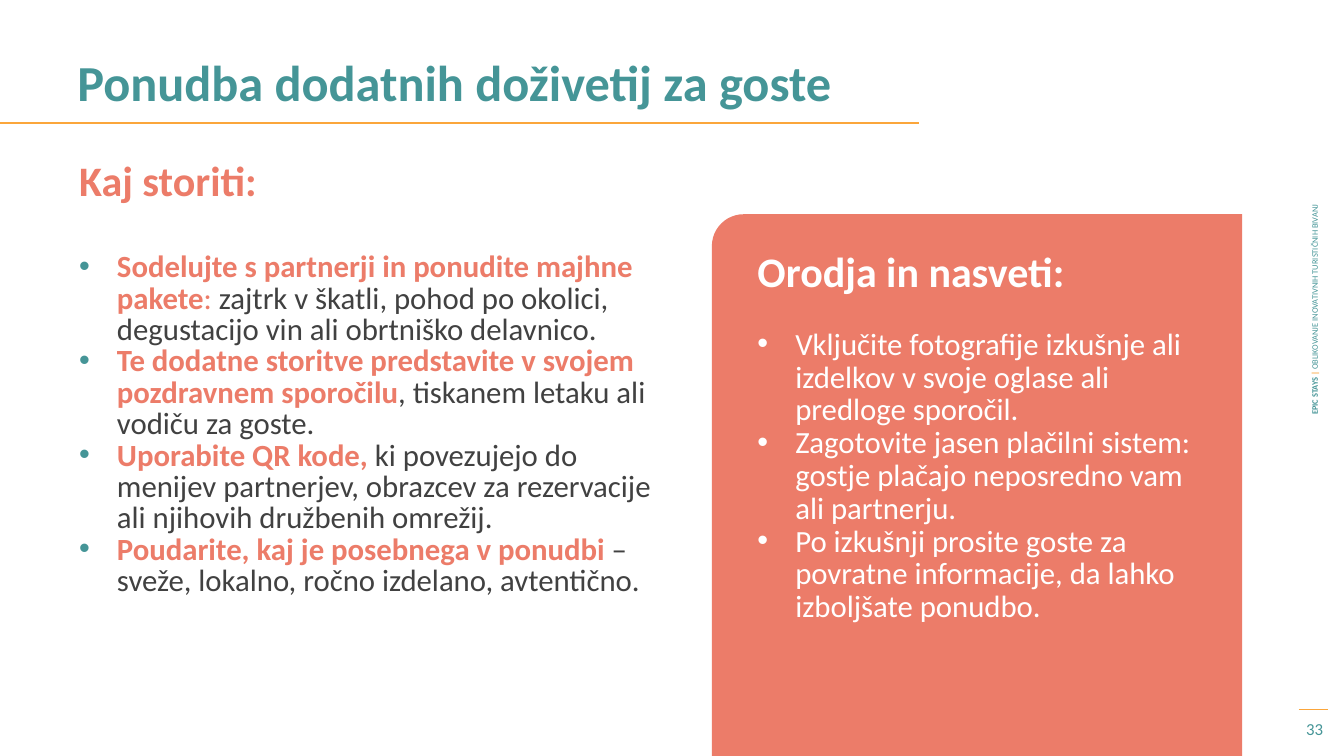
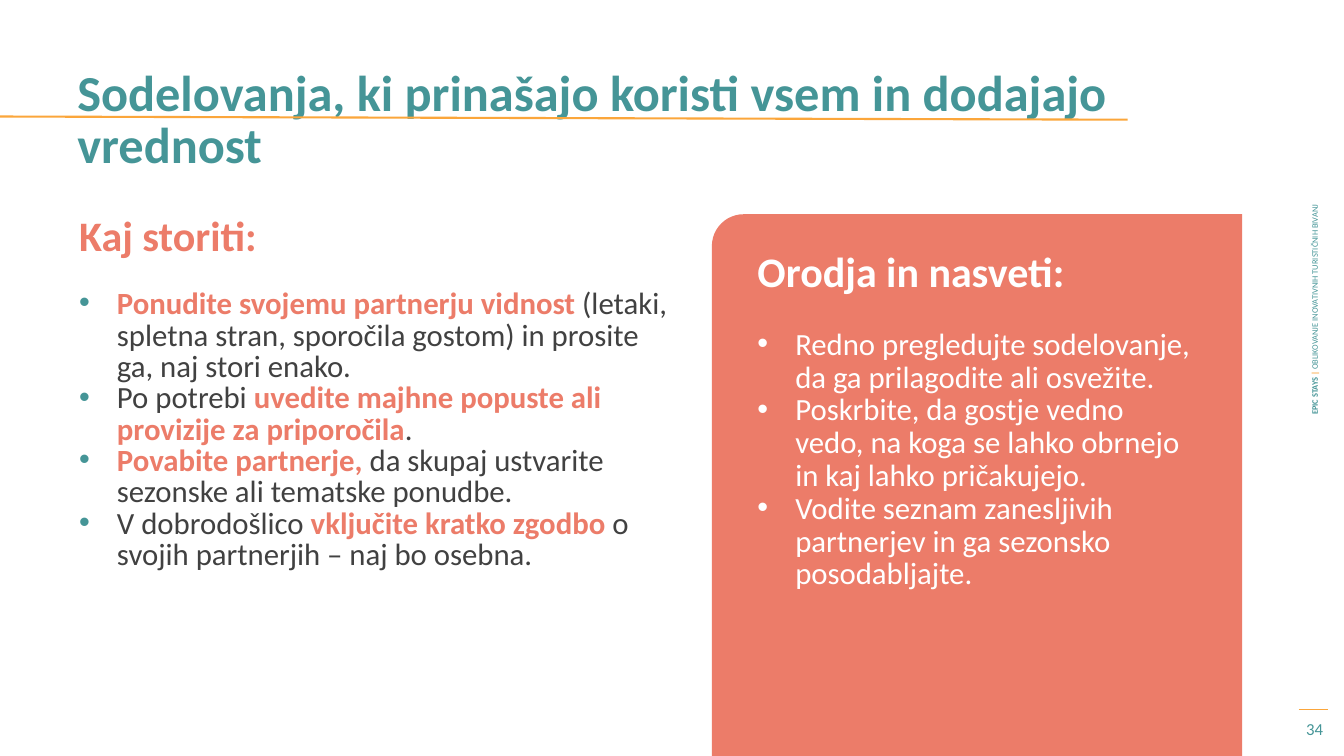
from dataclasses import dataclass

from lxml.etree import SubElement
from pptx import Presentation
from pptx.dml.color import RGBColor
from pptx.enum.shapes import MSO_CONNECTOR, MSO_SHAPE
from pptx.enum.text import MSO_ANCHOR, MSO_AUTO_SIZE, PP_ALIGN
from pptx.oxml.ns import qn
from pptx.util import Pt

PX = 9525  # EMU in one px, 96 px to the inch


@dataclass(frozen=True)
class Theme:
    font: str = "Calibri"
    teal: str = "459597"
    amber: str = "FBA63B"
    coral: str = "EC7C69"
    ink: str = "414141"
    white: str = "FFFFFF"
    title: int = 36
    head: int = 30
    body: int = 22
    page: int = 12
    side: int = 6


T = Theme()

# Run styles: colour, bold
HOT = (T.coral, True)
TINT = (T.coral, False)
BODY = (T.ink, False)
PALE = (T.white, False)
TEAL = (T.teal, False)
MARK = (T.teal, True)

SLIDES = [
    {
        "page": "33",
        "title": "Ponudba dodatnih doživetij za goste",
        "top": 52, "rule": (117, 875, 117), "head": 152, "list": 236,
        "todo": [
            [("Sodelujte s partnerji in ponudite majhne pakete", HOT),
             (": ", TINT),
             ("zajtrk v škatli, pohod po okolici, degustacijo vin ali "
              "obrtniško delavnico.", BODY)],
            [("Te dodatne storitve predstavite v svojem pozdravnem "
              "sporočilu", HOT),
             (", tiskanem letaku ali vodiču za goste.", BODY)],
            [("Uporabite QR kode, ", HOT),
             ("ki povezujejo do menijev partnerjev, obrazcev za rezervacije "
              "ali njihovih družbenih omrežij.", BODY)],
            [("Poudarite, kaj je posebnega v ponudbi ", HOT),
             ("– sveže, lokalno, ročno izdelano, avtentično.", BODY)],
        ],
        "tips": [
            "Vključite fotografije izkušnje ali izdelkov v svoje oglase ali "
            "predloge sporočil.",
            "Zagotovite jasen plačilni sistem: gostje plačajo neposredno vam "
            "ali partnerju.",
            "Po izkušnji prosite goste za povratne informacije, da lahko "
            "izboljšate ponudbo.",
        ],
    },
    {
        "page": "34",
        "title": "Sodelovanja, ki prinašajo koristi vsem in dodajajo vrednost",
        "top": 61, "rule": (111, 1074, 114), "head": 204, "list": 271,
        "todo": [
            [("Ponudite svojemu partnerju vidnost ", HOT),
             ("(letaki, spletna stran, sporočila gostom) in prosite ga, naj "
              "stori enako.", BODY)],
            [("Po potrebi ", BODY),
             ("uvedite majhne popuste ali provizije za priporočila", HOT),
             (".", BODY)],
            [("Povabite partnerje, ", HOT),
             ("da skupaj ustvarite sezonske ali tematske ponudbe.", BODY)],
            [("V dobrodošlico ", BODY),
             ("vključite kratko zgodbo ", HOT),
             ("o svojih partnerjih – naj bo osebna.", BODY)],
        ],
        "tips": [
            "Redno pregledujte sodelovanje, da ga prilagodite ali osvežite.",
            "Poskrbite, da gostje vedno vedo, na koga se lahko obrnejo in kaj "
            "lahko pričakujejo.",
            "Vodite seznam zanesljivih partnerjev in ga sezonsko "
            "posodabljajte.",
        ],
    },
]


# Text helpers
def style(run, size, look):
    tint, bold = look
    run.font.name = T.font
    run.font.size = Pt(size)
    run.font.bold = bold
    run.font.color.rgb = RGBColor.from_string(tint)


def write(para, parts, size, lead=None):
    for text, look in parts:
        run = para.add_run()
        run.text = text
        style(run, size, look)
    if lead:
        para.line_spacing = Pt(lead)


def bullet(para, tint):
    props = para._p.get_or_add_pPr()
    props.set("marL", str(36 * PX))
    props.set("indent", str(-36 * PX))
    clr = SubElement(props, qn("a:buClr"))
    SubElement(clr, qn("a:srgbClr")).set("val", tint)
    SubElement(props, qn("a:buFont")).set("typeface", "Arial")
    SubElement(props, qn("a:buChar")).set("char", "•")


def items(frame, rows, tint, lead, fresh):
    for row in rows:
        para = frame.paragraphs[0] if fresh else frame.add_paragraph()
        fresh = False
        bullet(para, tint)
        write(para, row, T.body, lead)


def place(shape, box):
    shape.left, shape.top, shape.width, shape.height = (n * PX for n in box)


def text_box(slide, box, anchor=MSO_ANCHOR.TOP):
    shape = slide.shapes.add_textbox(*(n * PX for n in box))
    shape.text_frame.word_wrap = True
    shape.text_frame.vertical_anchor = anchor
    return shape


def line(slide, start, end, width):
    link = slide.shapes.add_connector(
        MSO_CONNECTOR.STRAIGHT, *(n * PX for n in start + end))
    link.line.color.rgb = RGBColor.from_string(T.amber)
    link.line.width = Pt(width)
    SubElement(link._element.spPr, qn("a:effectLst"))


# Title with its rule
def header(slide, box, text, rule):
    shape = slide.shapes.title
    place(shape, box)
    frame = shape.text_frame
    frame.text = text
    frame.word_wrap = True
    frame.auto_size = MSO_AUTO_SIZE.NONE
    frame.vertical_anchor = MSO_ANCHOR.TOP
    para = frame.paragraphs[0]
    para.alignment = PP_ALIGN.LEFT
    para.line_spacing = Pt(37.2)
    style(para.runs[0], T.title, MARK)
    start, right, end = rule
    line(slide, (0, start), (right, end), 1.5)


# Side label, divider and page number, in a strip at the right edge
def footer(slide, box, page):
    x, y, w, h = box
    long, thin = 554, 19
    label = text_box(
        slide, (x + (w - long) // 2, y + 395 - long // 2, long, thin),
        MSO_ANCHOR.MIDDLE)
    label.rotation = 270
    write(label.text_frame.paragraphs[0],
          [("EPIC STAYS ", MARK), ("| ", (T.amber, True)),
           ("OBLIKOVANJE INOVATIVNIH TURISTIČNIH BIVANJ", TEAL)], T.side)
    line(slide, (x + 10, y + h - 44), (x + 38, y + h - 44), 0.75)
    number = text_box(slide, (x, y + h - 42, w, 33), MSO_ANCHOR.MIDDLE)
    para = number.text_frame.paragraphs[0]
    para.alignment = PP_ALIGN.CENTER
    write(para, [(page, TEAL)], T.page)


# Left column: heading and list of steps
def steps(slide, box, gap, rows):
    x, y, w, h = box
    head = text_box(slide, (x, y, w, 84))
    write(head.text_frame.paragraphs[0], [("Kaj storiti:", HOT)], T.head, 29)
    body = text_box(slide, (x, y + gap, w, h))
    items(body.text_frame, rows, T.teal, 22.4, True)


# Right panel: rounded top-left corner, heading and tips
def panel(slide, box, tips):
    x, y, w, h = box
    card = slide.shapes.add_shape(
        MSO_SHAPE.ROUND_1_RECTANGLE, *(n * PX for n in box))
    card.adjustments[0] = 0.06
    card._element.spPr.xfrm.set("flipH", "1")
    card.shadow.inherit = False
    card.fill.solid()
    card.fill.fore_color.rgb = RGBColor.from_string(T.coral)
    card.line.fill.background()
    frame = text_box(slide, (x + 34, y + 42, w - 69, 345)).text_frame
    head = frame.paragraphs[0]
    write(head, [("Orodja in nasveti:", (T.white, True))], T.head, 23.4)
    head.space_after = Pt(23.4)
    items(frame, [[(tip, PALE)] for tip in tips], T.white, 23.4, False)


def build(deck, data):
    slide = deck.slides.add_slide(deck.slide_layouts[5])
    header(slide, (64, data["top"], 1152, 84), data["title"], data["rule"])
    footer(slide, (1227, 0, 50, 720), data["page"])
    steps(slide, (66, data["head"], 589, 384),
          data["list"] - data["head"], data["todo"])
    panel(slide, (678, 204, 505, 516), data["tips"])


def main():
    deck = Presentation()
    deck.slide_width, deck.slide_height = 1280 * PX, 720 * PX
    for data in SLIDES:
        build(deck, data)
    deck.save("out.pptx")


if __name__ == "__main__":
    main()
